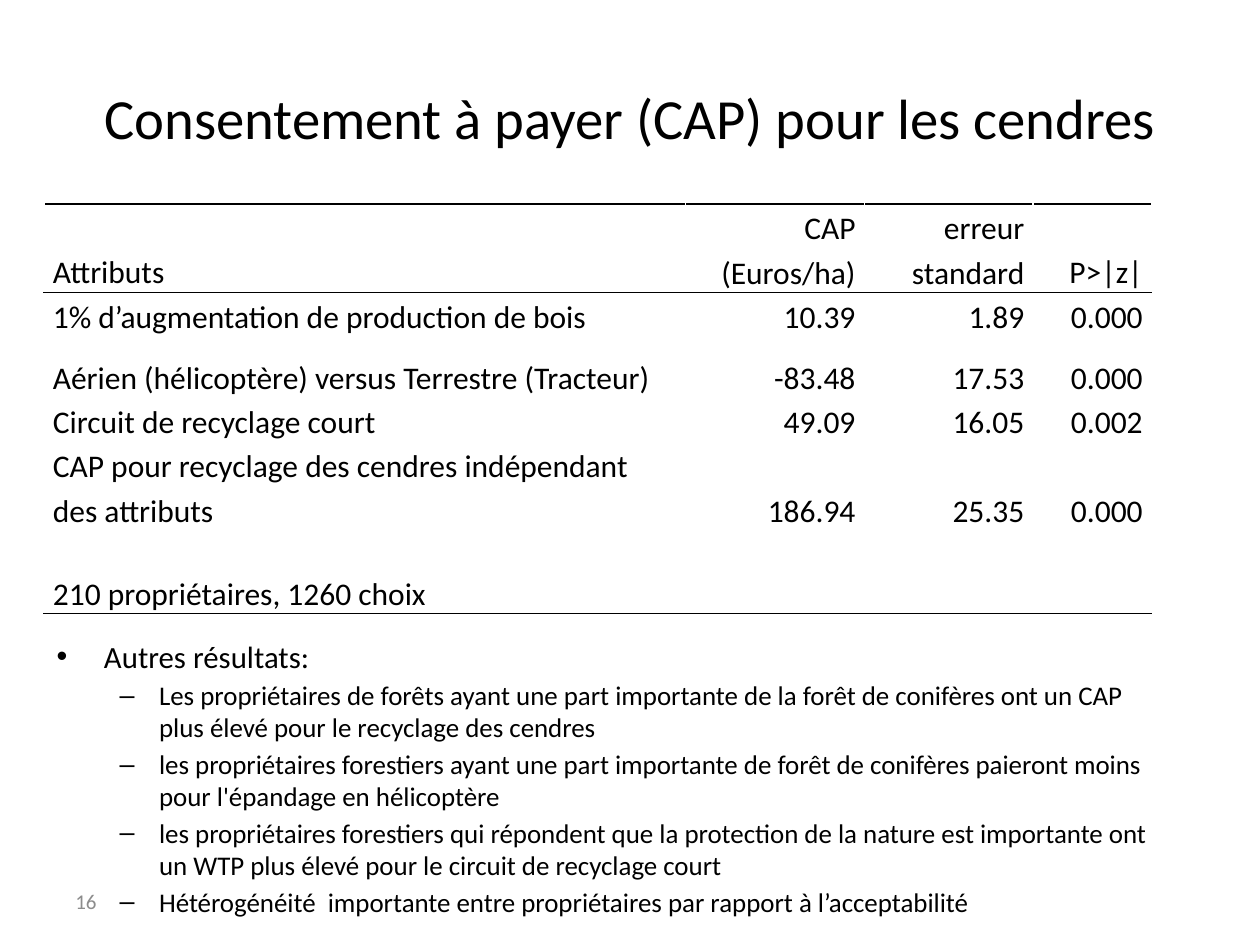
from dataclasses import dataclass

from lxml import etree
from pptx import Presentation
from pptx import util as u
from pptx.dml.color import RGBColor
from pptx.enum import text
from pptx.oxml.ns import qn

BLACK = RGBColor(0x00, 0x00, 0x00)
GREY = RGBColor(0x8C, 0x8C, 0x8C)
WHITE = RGBColor(0xFF, 0xFF, 0xFF)
FONT = "Calibri"

WIDTH, HEIGHT = 10, 7.5
LEFT = 0.35
TABLE_TOP = 1.62
LINE = 0.35  # height of one table line
COLUMNS = (5.09, 1.42, 1.34, 0.94)


@dataclass
class Row:
    cells: tuple[str, ...]
    height: float = LINE
    top: RGBColor = WHITE
    bottom: RGBColor = WHITE


ROWS = (
    Row(("Attributs", "CAP\n(Euros/ha)", "erreur standard", "P>|z|"),
        2 * LINE, top=BLACK, bottom=BLACK),
    Row(("1% d’augmentation de production de bois", "10.39", "1.89", "0.000"),
        top=BLACK),
    Row(("Aérien (hélicoptère) versus Terrestre (Tracteur)",
         "-83.48", "17.53", "0.000"), 0.49),
    Row(("Circuit de recyclage court", "49.09", "16.05", "0.002")),
    Row(("CAP pour recyclage des cendres indépendant des attributs",
         "186.94", "25.35", "0.000"), 2 * LINE),
    Row(("210 propriétaires, 1260 choix", "", "", ""), 0.66, bottom=BLACK),
)

RESULTS = (
    "Les propriétaires de forêts ayant une part importante de la forêt de "
    "conifères ont un CAP plus élevé pour le recyclage des cendres",
    "les propriétaires forestiers ayant une part importante de forêt de "
    "conifères paieront moins pour l'épandage en hélicoptère",
    "les propriétaires forestiers qui répondent que la protection de la nature "
    "est importante ont un WTP plus élevé pour le circuit de recyclage court",
    "Hétérogénéité  importante entre propriétaires par rapport à l’acceptabilité",
)


def place(sp, left: float, top: float, width: float, height: float) -> None:
    sp.left, sp.top = u.Inches(left), u.Inches(top)
    sp.width, sp.height = u.Inches(width), u.Inches(height)


def set_font(p, size: float, color: RGBColor = BLACK) -> None:
    p.font.name, p.font.size = FONT, u.Pt(size)
    p.font.color.rgb = color


def set_borders(cell, top: RGBColor, bottom: RGBColor) -> None:
    """Draw 1 pt borders; the sides are white. They must precede the fill."""
    tc_pr = cell._tc.get_or_add_tcPr()
    sides = {"lnL": WHITE, "lnR": WHITE, "lnT": top, "lnB": bottom}
    for i, (tag, color) in enumerate(sides.items()):
        ln = etree.Element(qn(f"a:{tag}"), w=str(u.Pt(1)))
        fill = etree.SubElement(ln, qn("a:solidFill"))
        etree.SubElement(fill, qn("a:srgbClr"), val=str(color))
        tc_pr.insert(i, ln)


def fill_cell(cell, words: str, row: Row, align) -> None:
    cell.fill.solid()
    cell.fill.fore_color.rgb = WHITE
    cell.margin_left = cell.margin_right = u.Inches(0.07)
    cell.margin_top = cell.margin_bottom = 0
    cell.vertical_anchor = text.MSO_ANCHOR.BOTTOM
    cell.text_frame.text = words
    for p in cell.text_frame.paragraphs:
        p.alignment, p.line_spacing = align, 1.15
        set_font(p, 18)
    set_borders(cell, row.top, row.bottom)


def add_results_table(slide) -> None:
    frame = slide.shapes.add_table(
        len(ROWS), len(COLUMNS), u.Inches(LEFT), u.Inches(TABLE_TOP),
        u.Inches(sum(COLUMNS)), u.Inches(sum(row.height for row in ROWS)))
    table = frame.table
    table.first_row = table.horz_banding = False
    for column, width in zip(table.columns, COLUMNS):
        column.width = u.Inches(width)
    for r, row in enumerate(ROWS):
        table.rows[r].height = u.Inches(row.height)
        for c, words in enumerate(row.cells):
            align = text.PP_ALIGN.RIGHT if c else text.PP_ALIGN.LEFT
            fill_cell(table.cell(r, c), words, row, align)


def add_title(slide) -> None:
    title = slide.shapes.title
    place(title, 0.05 * WIDTH, 0.04 * HEIGHT, 0.9 * WIDTH, HEIGHT / 6)
    tf = title.text_frame
    tf.text = "Consentement à payer (CAP) pour les cendres"
    tf.auto_size = text.MSO_AUTO_SIZE.NONE
    set_font(tf.paragraphs[0], 32.4)


def add_other_results(slide) -> None:
    body = slide.placeholders[1]
    place(body, LEFT, 5.01, 0.9 * WIDTH, 2.13)
    tf = body.text_frame
    tf.text = "\n".join(("Autres résultats:", *RESULTS))
    tf.auto_size = text.MSO_AUTO_SIZE.NONE
    for i, p in enumerate(tf.paragraphs):
        p.level = 1 if i else 0
        p.space_before = u.Pt(2.4)
        set_font(p, 15.4 if i else 17.6)


def add_page_number(slide) -> None:
    sp = slide.shapes.add_textbox(0, 0, 0, 0)
    place(sp, 0.05 * WIDTH, 6.95, 2.33, 0.4)
    tf = sp.text_frame
    tf.word_wrap = True
    tf.vertical_anchor = text.MSO_ANCHOR.MIDDLE
    tf.text = "16"
    set_font(tf.paragraphs[0], 12, GREY)


def main() -> None:
    prs = Presentation()
    prs.slide_width, prs.slide_height = u.Inches(WIDTH), u.Inches(HEIGHT)
    slide = prs.slides.add_slide(prs.slide_layouts[1])
    add_title(slide)
    add_page_number(slide)
    add_other_results(slide)
    add_results_table(slide)
    prs.save("out.pptx")


if __name__ == "__main__":
    main()
